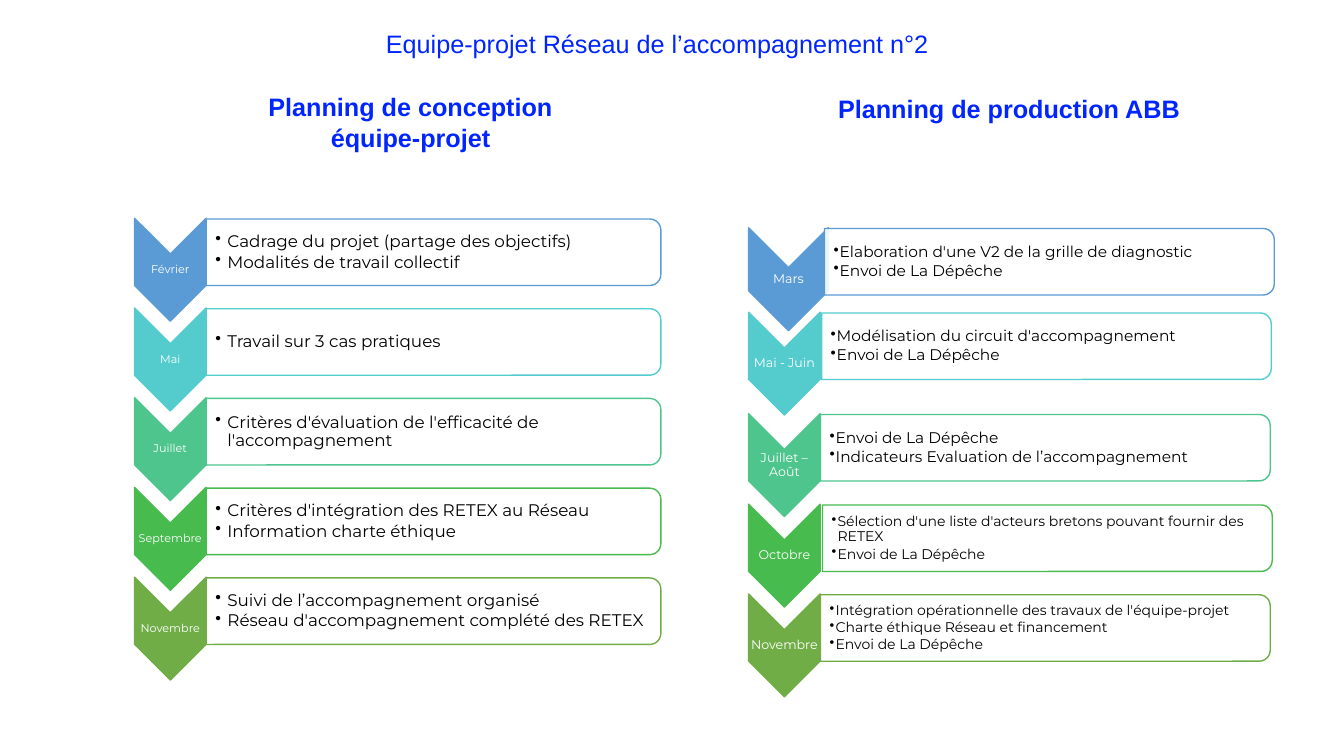
import dataclasses

import pptx
import pptx.dml.color
import pptx.enum.shapes
import pptx.enum.text
import pptx.oxml
import pptx.oxml.ns
import pptx.util

RGBColor = pptx.dml.color.RGBColor
Pt = pptx.util.Pt
SHAPE = pptx.enum.shapes.MSO_SHAPE
ALIGN = pptx.enum.text.PP_ALIGN
ANCHOR = pptx.enum.text.MSO_ANCHOR

TITLE_BLUE = RGBColor(0x00, 0x25, 0xFF)
WHITE = RGBColor(0xFF, 0xFF, 0xFF)
BLACK = RGBColor(0x00, 0x00, 0x00)
STEP_COLOURS = [
    RGBColor(0x5B, 0x9B, 0xD5),
    RGBColor(0x54, 0xCC, 0xCD),
    RGBColor(0x4D, 0xC5, 0x8D),
    RGBColor(0x48, 0xBB, 0x4F),
    RGBColor(0x70, 0xAD, 0x47),
]

SLIDE_WIDTH = pptx.util.Inches(13.33)
SLIDE_HEIGHT = pptx.util.Inches(7.5)
CHEVRON_WIDTH, CHEVRON_HEIGHT = 5.32, 13.6
LABEL_HEIGHT = 4.13
CARD_HEIGHT = 8.8
CARD_MARGIN = 0.4


@dataclasses.dataclass
class Box:
    """Area given in percent of the slide's width and height."""
    left: float
    top: float
    width: float
    height: float

    def emu(self):
        return (int(SLIDE_WIDTH * self.left / 100), int(SLIDE_HEIGHT * self.top / 100),
                int(SLIDE_WIDTH * self.width / 100), int(SLIDE_HEIGHT * self.height / 100))


@dataclasses.dataclass
class Step:
    month: str
    tasks: list
    top: float
    card_left: float
    task_size: int
    chevron_width: float = CHEVRON_WIDTH


CONCEPTION_TASKS = [
    ("Février", ["Cadrage du projet (partage des objectifs)", "Modalités de travail collectif"]),
    ("Mai", ["Travail sur 3 cas pratiques"]),
    ("Juillet", ["Critères d'évaluation de l'efficacité de l'accompagnement"]),
    ("Septembre", ["Critères d'intégration des RETEX au Réseau", "Information charte éthique"]),
    ("Novembre", ["Suivi de l’accompagnement organisé",
                  "Réseau d'accompagnement complété des RETEX"]),
]
CONCEPTION = [Step(month, tasks, 28.87 + 11.87 * row, 15.34, 12)
              for row, (month, tasks) in enumerate(CONCEPTION_TASKS)]

DISPATCH = "Envoi de La Dépêche"
PRODUCTION = [
    Step("Mars", ["Elaboration d'une V2 de la grille de diagnostic", DISPATCH],
         30.13, 61.35, 11, 5.93),
    Step("Mai - Juin", ["Modélisation du circuit d'accompagnement", DISPATCH],
         41.3, 61.13, 11),
    Step("Juillet – Août", [DISPATCH, "Indicateurs Evaluation de l’accompagnement"],
         54.73, 61.05, 11),
    Step("Octobre", ["Sélection d'une liste d'acteurs bretons pouvant fournir des RETEX", DISPATCH],
         66.7, 61.2, 10),
    Step("Novembre", ["Intégration opérationnelle des travaux de l'équipe-projet",
                      "Charte éthique Réseau et financement", DISPATCH],
         78.57, 61.05, 10),
]


def add_run(paragraph, text, font_name, size, colour, bold=False):
    run = paragraph.add_run()
    run.text = text
    run.font.name = font_name
    run.font.size = Pt(size)
    run.font.bold = bold
    run.font.color.rgb = colour


def fill_heading(placeholder, box, lines, align, bold):
    placeholder.left, placeholder.top, placeholder.width, placeholder.height = box.emu()
    frame = placeholder.text_frame
    frame.auto_size = pptx.enum.text.MSO_AUTO_SIZE.NONE
    frame.vertical_anchor = ANCHOR.TOP
    for index, line in enumerate(lines):
        paragraph = frame.add_paragraph() if index else frame.paragraphs[0]
        paragraph.alignment = align
        paragraph.space_before = Pt(0)
        add_run(paragraph, line, "Arial", 18, TITLE_BLUE, bold)


def add_turned_shape(shapes, kind, box, fill, line):
    """Add a shape turned a quarter clockwise that ends up covering box."""
    left, top, width, height = box.emu()
    shift = (width - height) // 2
    shape = shapes.add_shape(kind, left + shift, top - shift, height, width)
    shape.rotation = 90
    shape.shadow.inherit = False
    shape.fill.solid()
    shape.fill.fore_color.rgb = fill
    shape.line.color.rgb = line
    shape.line.width = Pt(1)
    return shape


def set_opacity(shape, percent):
    colour = shape.fill._xPr.find(".//" + pptx.oxml.ns.qn("a:srgbClr"))
    colour.append(pptx.oxml.parse_xml(
        f'<a:alpha {pptx.oxml.ns.nsdecls("a")} val="{percent * 1000}"/>'))


def add_text(shapes, box, lines, size, colour, left_inset=0.01, align=None, bullet_indent=None):
    frame = shapes.add_textbox(*box.emu()).text_frame
    frame.word_wrap = True
    frame.vertical_anchor = ANCHOR.MIDDLE
    frame.margin_left = pptx.util.Inches(left_inset)
    frame.margin_right = frame.margin_top = frame.margin_bottom = pptx.util.Inches(0.01)
    for index, line in enumerate(lines):
        paragraph = frame.add_paragraph() if index else frame.paragraphs[0]
        if bullet_indent:
            add_bullet(paragraph, pptx.util.Inches(bullet_indent))
        paragraph.alignment = align
        paragraph.line_spacing = 0.9
        paragraph.space_after = Pt(size * 0.15)
        add_run(paragraph, line, "Montserrat", size, colour)


def add_bullet(paragraph, indent):
    properties = paragraph._p.get_or_add_pPr()
    properties.set("marL", str(indent))
    properties.set("indent", str(-indent))
    properties.append(pptx.oxml.parse_xml(
        f'<a:buChar {pptx.oxml.ns.nsdecls("a")} char="•"/>'))


def add_step(shapes, step, colour, left, card_width, month_size, bullet_indent):
    chevron = Box(left, step.top, step.chevron_width, CHEVRON_HEIGHT)
    label = Box(left, step.top + (CHEVRON_HEIGHT - LABEL_HEIGHT) / 2,
                step.chevron_width, LABEL_HEIGHT)
    card = Box(step.card_left, step.top + 0.1, card_width, CARD_HEIGHT)
    tasks = Box(card.left, card.top + CARD_MARGIN,
                card.width - CARD_MARGIN / 2, card.height - 2 * CARD_MARGIN)

    add_turned_shape(shapes, SHAPE.CHEVRON, chevron, colour, colour)
    add_text(shapes, label, [step.month], month_size, WHITE, align=ALIGN.CENTER)
    outline = add_turned_shape(shapes, SHAPE.ROUND_2_SAME_RECTANGLE, card, WHITE, colour)
    set_opacity(outline, 90)
    add_text(shapes, tasks, step.tasks, step.task_size, BLACK,
             left_inset=0.09, bullet_indent=bullet_indent)


def add_schedule(slide, steps, left, card_width, month_size, bullet_indent):
    group = slide.shapes.add_group_shape()
    for step, colour in zip(steps, STEP_COLOURS):
        add_step(group.shapes, step, colour, left, card_width, month_size, bullet_indent)


def add_planning_slide(deck):
    slide = deck.slides.add_slide(deck.slide_layouts.get_by_name("Comparison"))
    title, conception, conception_body, production, production_body = slide.placeholders
    for unused in (conception_body, production_body):
        unused.element.getparent().remove(unused.element)

    fill_heading(title, Box(12, 3.07, 73.8, 5.4),
                 ["Equipe-projet Réseau de l’accompagnement n°2"], ALIGN.CENTER, False)
    fill_heading(conception, Box(13, 11.47, 35.1, 9.5),
                 ["Planning de conception", "équipe-projet"], ALIGN.CENTER, True)
    fill_heading(production, Box(61.6, 11.73, 30.1, 5.4),
                 ["Planning de production ABB"], ALIGN.LEFT, True)
    add_schedule(slide, CONCEPTION, 10.01, 33.83, 8, 0.12)
    add_schedule(slide, PRODUCTION, 55.7, 33.46, 9, 0.06)


def main():
    deck = pptx.Presentation()
    deck.slide_width, deck.slide_height = SLIDE_WIDTH, SLIDE_HEIGHT
    add_planning_slide(deck)
    deck.save("out.pptx")


if __name__ == "__main__":
    main()
